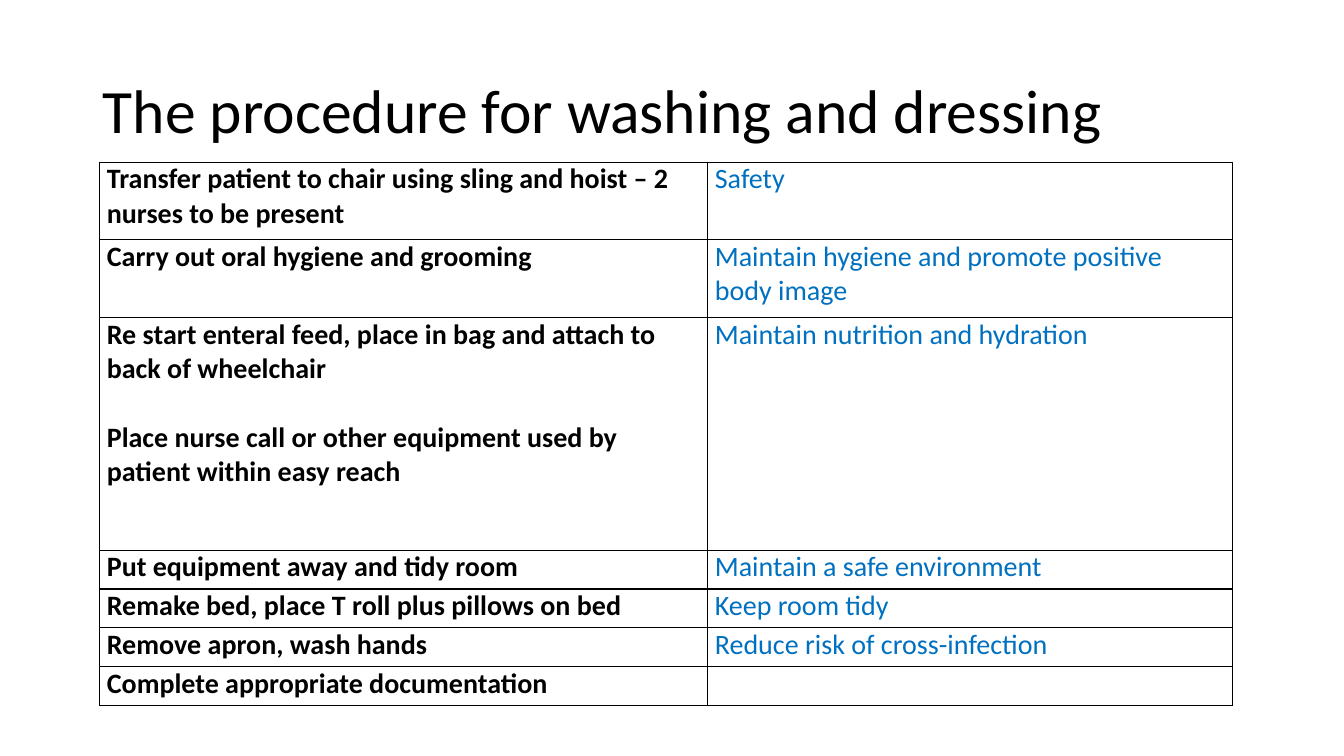
import pptx
import pptx.dml.color
import pptx.enum.text
import pptx.oxml
import pptx.oxml.ns
import pptx.util

Inches = pptx.util.Inches
Pt = pptx.util.Pt
FONT = "Calibri"
BLACK, BLUE, WHITE = "000000", "0070C0", "FFFFFF"
COLUMN_WIDTHS = [6.03, 5.2]
LINE_HEIGHT = 0.385
PROCEDURE = [
    (2, ["Transfer patient to chair using sling and hoist – 2 nurses to be present"], "Safety"),
    (2, ["Carry out oral hygiene and grooming"], "Maintain hygiene and promote positive body image"),
    (6, ["Re start enteral feed, place in bag and attach to back of wheelchair",
         "Place nurse call or other equipment used by patient within easy reach"],
     "Maintain nutrition and hydration"),
    (1, ["Put equipment away and tidy room"], "Maintain a safe environment"),
    (1, ["Remake bed, place T roll plus pillows on bed"], "Keep room tidy"),
    (1, ["Remove apron, wash hands"], "Reduce risk of cross-infection"),
    (1, ["Complete appropriate documentation"], ""),
]


def color(value):
    return pptx.dml.color.RGBColor.from_string(value)


def style_font(font, size, value, bold=False):
    font.name = FONT
    font.size = Pt(size)
    font.bold = bold
    font.color.rgb = color(value)


def add_borders(cell):
    properties = cell._tc.get_or_add_tcPr()
    for index, side in enumerate(("lnL", "lnR", "lnT", "lnB")):
        properties.insert(index, pptx.oxml.parse_xml(
            f'<a:{side} {pptx.oxml.ns.nsdecls("a")} w="12700">'
            f'<a:solidFill><a:srgbClr val="{BLACK}"/></a:solidFill></a:{side}>'))


def fill_cell(cell, texts, value, bold):
    cell.margin_left = cell.margin_right = Inches(0.07)
    cell.margin_top = cell.margin_bottom = 0
    cell.fill.solid()
    cell.fill.fore_color.rgb = color(WHITE)
    add_borders(cell)
    cell.text = "\n".join(texts)
    for index, paragraph in enumerate(cell.text_frame.paragraphs):
        style_font(paragraph.font, 20, value, bold)
        if index:
            paragraph.space_before = Pt(24.5)


def add_title(slide, left, top, width, height):
    title = slide.shapes.title
    title.left, title.top = Inches(left), Inches(top)
    title.width, title.height = Inches(width), Inches(height)
    title.text = "The procedure for washing and dressing"
    title.text_frame.vertical_anchor = pptx.enum.text.MSO_ANCHOR.MIDDLE
    paragraph = title.text_frame.paragraphs[0]
    paragraph.alignment = pptx.enum.text.PP_ALIGN.LEFT
    paragraph.line_spacing = 0.9
    style_font(paragraph.font, 44, BLACK)


def add_procedure_table(slide, left, top):
    height = LINE_HEIGHT * sum(lines for lines, _, _ in PROCEDURE)
    table = slide.shapes.add_table(
        len(PROCEDURE), len(COLUMN_WIDTHS), Inches(left), Inches(top),
        Inches(sum(COLUMN_WIDTHS)), Inches(height)).table
    table.first_row = table.horz_banding = False
    for column, width in zip(table.columns, COLUMN_WIDTHS):
        column.width = Inches(width)
    for row, (lines, steps, reason) in zip(table.rows, PROCEDURE):
        row.height = Inches(lines * LINE_HEIGHT)
        fill_cell(row.cells[0], steps, BLACK, True)
        fill_cell(row.cells[1], [reason], BLUE, False)


def main():
    presentation = pptx.Presentation()
    presentation.slide_width = Inches(13.33)
    presentation.slide_height = Inches(7.5)
    slide = presentation.slides.add_slide(presentation.slide_layouts[5])
    add_title(slide, 0.92, 0.4, 11.5, 1.45)
    add_procedure_table(slide, 0.99, 1.61)
    presentation.save("out.pptx")


if __name__ == "__main__":
    main()
